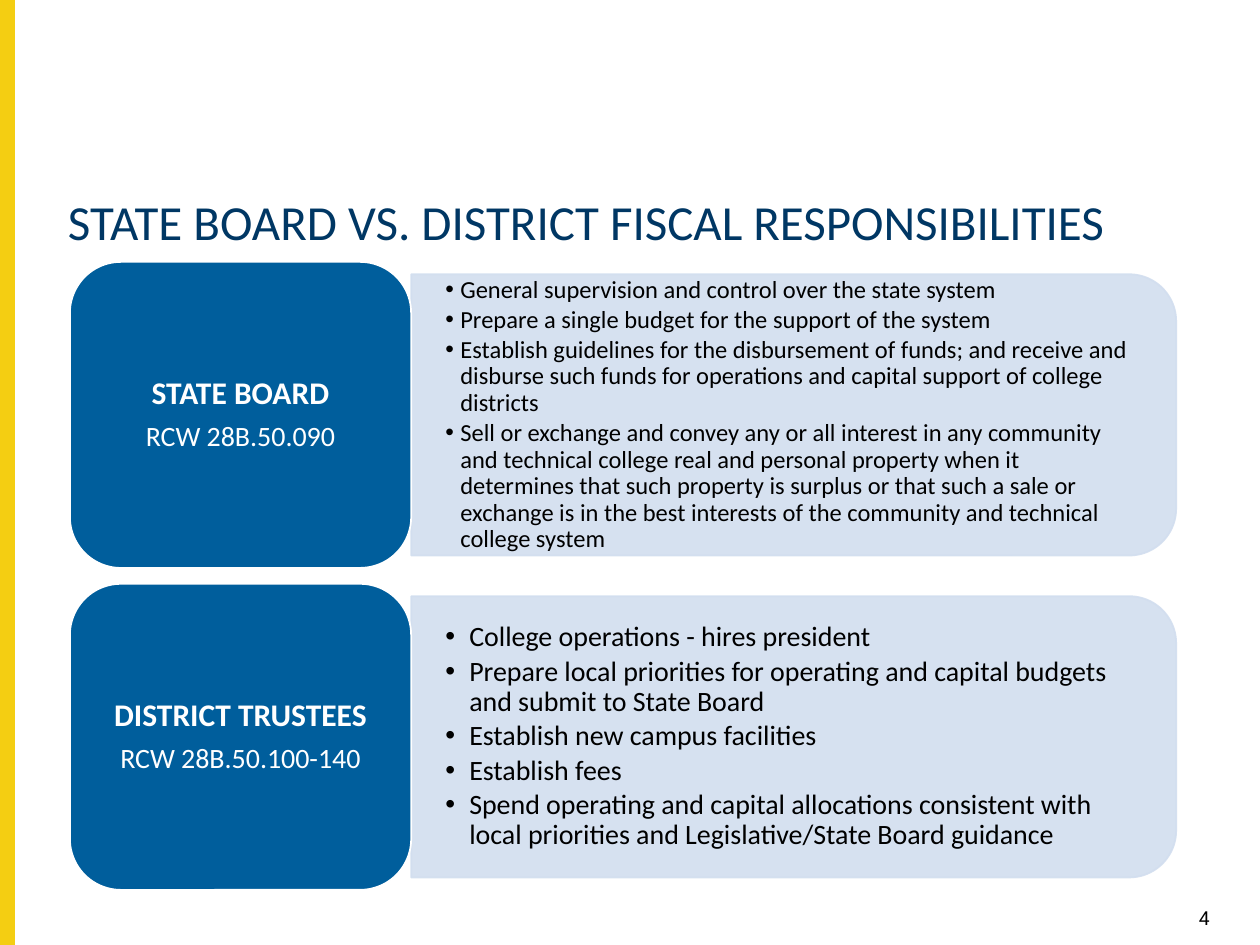
import pptx
import pptx.util
from dataclasses import dataclass
from lxml import etree
from pptx.dml.color import RGBColor
from pptx.enum.shapes import MSO_SHAPE
from pptx.enum.text import MSO_ANCHOR, MSO_AUTO_SIZE, PP_ALIGN
from pptx.oxml.ns import qn
from pptx.util import Cm, Pt


@dataclass(frozen=True)
class Theme:
    yellow: str = "F4CE12"
    navy: str = "003764"
    blue: str = "005E9C"
    pale: str = "D2DEEF"
    white: str = "FFFFFF"
    black: str = "000000"
    text_font: str = "Calibri"
    number_font: str = "Roboto"
    title_size: int = 28
    role_size: int = 18
    statute_size: int = 16
    number_size: int = 11


@dataclass(frozen=True)
class Box:
    left: float
    top: float
    width: float
    height: float

    def lengths(self):
        return Cm(self.left), Cm(self.top), Cm(self.width), Cm(self.height)


THEME = Theme()
PALE_OPACITY = 90

# Role, statute, duty size (pt), hanging indent (cm), duties
BODIES = [
    ("STATE BOARD", "RCW 28B.50.090", 14, 0.3, [
        "General supervision and control over the state system",
        "Prepare a single budget for the support of the system",
        "Establish guidelines for the disbursement of funds; and receive and "
        "disburse such funds for operations and capital support of college districts",
        "Sell or exchange and convey any or all interest in any community and "
        "technical college real and personal property when it determines that such "
        "property is surplus or that such a sale or exchange is in the best "
        "interests of the community and technical college system",
    ]),
    ("DISTRICT TRUSTEES", "RCW 28B.50.100-140", 16, 0.48, [
        "College operations - hires president",
        "Prepare local priorities for operating and capital budgets and submit "
        "to State Board",
        "Establish new campus facilities",
        "Establish fees",
        "Spend operating and capital allocations consistent with local priorities "
        "and Legislative/State Board guidance",
    ]),
]


def style(paragraph, size, color, font=THEME.text_font, bold=False):
    paragraph.font.name = font
    paragraph.font.size = Pt(size)
    paragraph.font.bold = bold
    paragraph.font.color.rgb = RGBColor.from_string(color)


def space(paragraph, after=0.0):
    paragraph.line_spacing = 0.9
    paragraph.space_before = Pt(0)
    paragraph.space_after = Pt(after)


def set_frame(frame, anchor, side, end):
    frame.word_wrap = True
    frame.auto_size = MSO_AUTO_SIZE.NONE
    frame.vertical_anchor = anchor
    frame.margin_left = frame.margin_right = Cm(side)
    frame.margin_top = frame.margin_bottom = Cm(end)


def place(placeholder, box):
    (placeholder.left, placeholder.top,
     placeholder.width, placeholder.height) = box.lengths()


def add_block(slide, preset, box, fill, line):
    block = slide.shapes.add_shape(preset, *box.lengths())
    block.shadow.inherit = False
    block.fill.solid()
    block.fill.fore_color.rgb = RGBColor.from_string(fill)
    block.line.color.rgb = RGBColor.from_string(line)
    block.line.width = Pt(1)
    return block


def build_title(title, box):
    place(title, box)
    set_frame(title.text_frame, MSO_ANCHOR.TOP, 0.25, 0.13)
    heading = title.text_frame.paragraphs[0]
    heading.text = "STATE BOARD VS. DISTRICT FISCAL RESPONSIBILITIES"
    heading.alignment = PP_ALIGN.LEFT
    space(heading)
    style(heading, THEME.title_size, THEME.navy)


def build_panel(slide, box):
    # The preset rounds its top corners, so a quarter turn puts them at the right
    upright = Box(box.left + (box.width - box.height) / 2,
                  box.top + (box.height - box.width) / 2,
                  box.height, box.width)
    panel = add_block(slide, MSO_SHAPE.ROUND_2_SAME_RECTANGLE, upright,
                      THEME.pale, THEME.pale)
    panel.rotation = 90
    for color in panel._element.spPr.iter(qn("a:srgbClr")):
        etree.SubElement(color, qn("a:alpha"), val=str(PALE_OPACITY * 1000))


def build_duties(slide, placeholder, box, duties, size, indent):
    place(placeholder, box)
    slide.shapes._spTree.append(placeholder._element)  # in front of its panel
    frame = placeholder.text_frame
    set_frame(frame, MSO_ANCHOR.MIDDLE, 0.69, 0.36)
    frame.text = "\n".join(duties)
    for duty in frame.paragraphs:
        duty.alignment = PP_ALIGN.LEFT
        space(duty, after=size * 0.15)
        properties = duty._p.get_or_add_pPr()
        properties.set("marL", str(Cm(indent)))
        properties.set("indent", str(-Cm(indent)))
        etree.SubElement(properties, qn("a:buChar"), char="•")
        style(duty, size, THEME.black)


def build_label(slide, box, role_name, statute_name):
    label = add_block(slide, MSO_SHAPE.ROUNDED_RECTANGLE, box,
                      THEME.blue, THEME.white)
    frame = label.text_frame
    set_frame(frame, MSO_ANCHOR.MIDDLE, 0.48, 0.4)
    frame.text = f"{role_name}\n{statute_name}"
    role, statute = frame.paragraphs
    for paragraph, size in ((role, THEME.role_size), (statute, THEME.statute_size)):
        paragraph.alignment = PP_ALIGN.CENTER
        space(paragraph, after=size * 0.35)
        style(paragraph, size, THEME.white, bold=paragraph is role)


def build_body_row(slide, placeholder, box, body):
    role, statute, size, indent, duties = body
    label_width, inset, trim = 6.88, 0.25, 0.28
    panel = Box(box.left + label_width, box.top + inset,
                box.width - label_width, box.height - 2 * inset)
    build_panel(slide, panel)
    build_duties(slide, placeholder,
                 Box(panel.left, panel.top + trim,
                     panel.width - trim, panel.height - 2 * trim),
                 duties, size, indent)
    build_label(slide, Box(box.left, box.top, label_width, box.height),
                role, statute)


def build_page_number(slide, box):
    frame = slide.shapes.add_textbox(*box.lengths()).text_frame
    set_frame(frame, MSO_ANCHOR.TOP, 0.25, 0.13)
    number = frame.paragraphs[0]
    number.text = "4"
    number.alignment = PP_ALIGN.RIGHT
    style(number, THEME.number_size, THEME.black, THEME.number_font)


def main():
    deck = pptx.Presentation()
    deck.slide_width, deck.slide_height = Cm(25.4), Cm(19.05)
    slide = deck.slides.add_slide(deck.slide_layouts.get_by_name("Two Content"))
    title, *lists = slide.placeholders

    # Accent bar and heading
    add_block(slide, MSO_SHAPE.RECTANGLE, Box(0, 0, 0.28, 19.05),
              THEME.yellow, THEME.yellow)
    build_title(title, Box(1.12, 3.86, 23.16, 1.78))

    # One row for each governing body
    row_height, gap = 6.17, 0.32
    for index, (placeholder, body) in enumerate(zip(lists, BODIES)):
        row = Box(1.41, 5.28 + index * (row_height + gap), 22.3, row_height)
        build_body_row(slide, placeholder, row, body)

    build_page_number(slide, Box(23.37, 18.14, 1.27, 0.53))
    deck.save("out.pptx")


if __name__ == "__main__":
    main()
